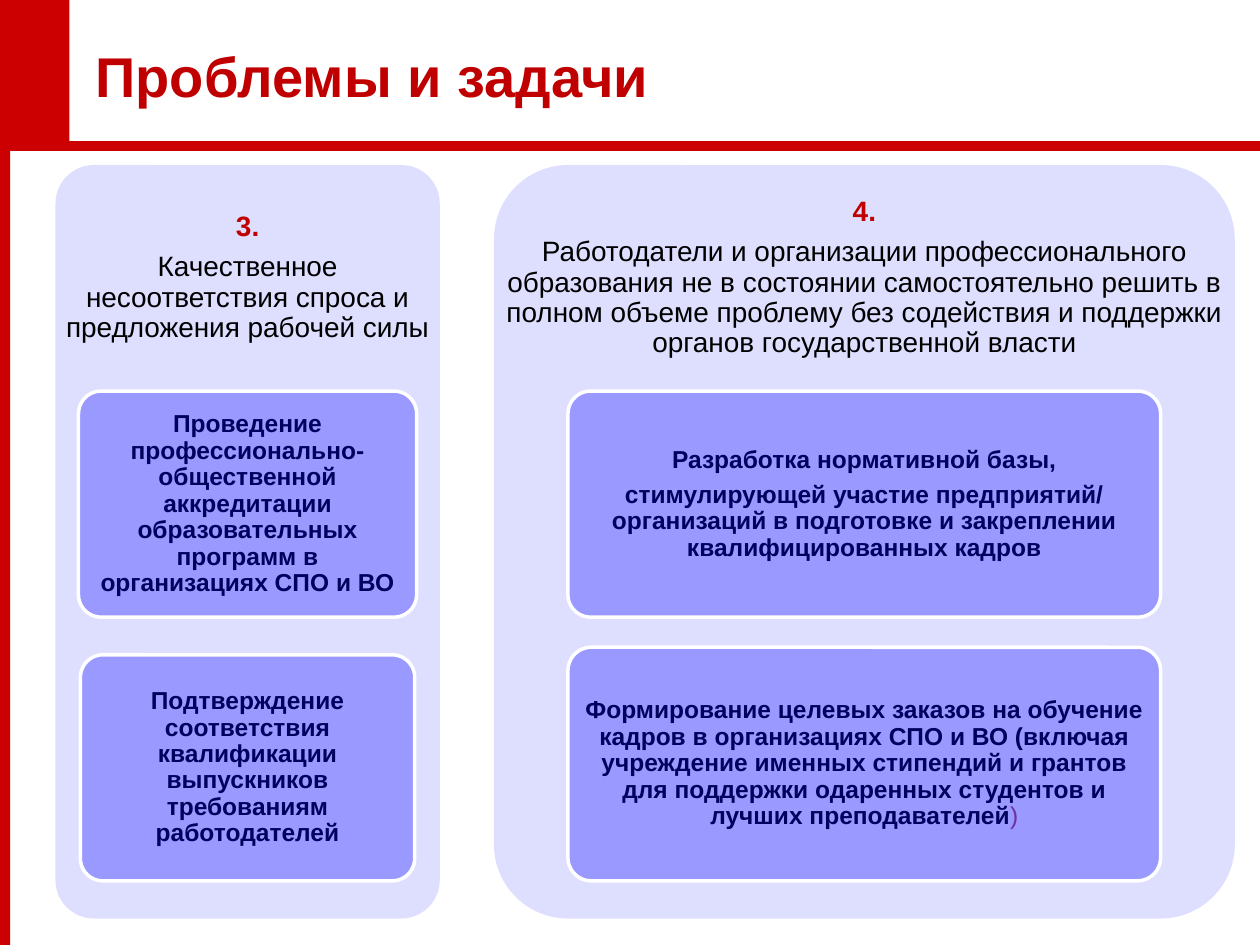
import pptx
import pptx.dml.color
import pptx.enum.shapes
import pptx.enum.text
import pptx.util

ANCHOR = pptx.enum.text.MSO_ANCHOR
ALIGN = pptx.enum.text.PP_ALIGN
SHAPE = pptx.enum.shapes.MSO_SHAPE

SLIDE_WIDTH, SLIDE_HEIGHT = 10, 7.5
PANEL_TOP, PANEL_HEIGHT = 1.31, 5.98
HEADING_SHARE = 0.3

THEME = {
    "font": "Arial",
    "frame": "CC0000",
    "panel": "DEDEFF",
    "card": "9999FF",
    "outline": "FFFFFF",
    "title": {"size": 32, "bold": True, "color": "C00000"},
    "number": {"size": 16, "bold": True, "color": "C00000"},
    "problem": {"size": 16, "bold": False, "color": "000000"},
    "task": {"size": 14, "bold": True, "color": "00005E"},
    "bracket": {"size": 14, "bold": False, "color": "7030A0"},
}

PROBLEMS = [
    {
        "left": 0.44,
        "width": 3.05,
        "heading": [
            [("3.", "number")],
            [("Качественное несоответствия спроса и предложения рабочей силы", "problem")],
        ],
        "tasks": [
            (0.88, 0.3, 0.3, [[(
                "Проведение профессионально-общественной аккредитации "
                "образовательных программ в организациях СПО и ВО", "task")]]),
            (0.87, 0.65, 0.3, [[(
                "Подтверждение соответствия квалификации выпускников "
                "требованиям работодателей", "task")]]),
        ],
    },
    {
        "left": 3.92,
        "width": 5.88,
        "heading": [
            [("4.", "number")],
            [("Работодатели и организации профессионального образования не в состоянии "
              "самостоятельно решить в полном объеме проблему без содействия и поддержки "
              "органов государственной власти", "problem")],
        ],
        "tasks": [
            (0.8, 0.3, 0.3, [
                [("Разработка нормативной базы,", "task")],
                [("стимулирующей участие предприятий/ организаций в подготовке и "
                  "закреплении квалифицированных кадров", "task")],
            ]),
            (0.8, 0.64, 0.31, [[
                ("Формирование целевых заказов на обучение кадров в организациях СПО и ВО "
                 "(включая учреждение именных стипендий и грантов для поддержки одаренных "
                 "студентов и лучших преподавателей", "task"),
                (")", "bracket"),
            ]]),
        ],
    },
]


def rgb(color):
    """Return the colour object for a hex value."""
    return pptx.dml.color.RGBColor.from_string(color)


def inches(*lengths):
    """Convert lengths in inches."""
    return [pptx.util.Inches(length) for length in lengths]


def assign(target, values):
    """Set each named attribute of the target."""
    for name, value in values.items():
        setattr(target, name, value)


def add_block(slide, kind, box, fill, outline=None):
    """Add a filled shape with an optional outline."""
    block = slide.shapes.add_shape(kind, *inches(*box))
    block.shadow.inherit = False
    block.fill.solid()
    block.fill.fore_color.rgb = rgb(fill)
    if outline:
        block.line.color.rgb = rgb(outline)
        block.line.width = pptx.util.Pt(2)
    else:
        block.line.fill.background()
    return block


def add_rounded(slide, box, fill, outline=None):
    """Add a filled rectangle with rounded corners."""
    rounded = add_block(slide, SHAPE.ROUNDED_RECTANGLE, box, fill, outline)
    rounded.adjustments[0] = 0.1
    return rounded


def write(frame, paragraphs, side, end, layout):
    """Write styled paragraphs into a text frame."""
    side, end = inches(side, end)
    assign(frame, {
        "word_wrap": True,
        "vertical_anchor": ANCHOR.MIDDLE,
        "margin_left": side,
        "margin_right": side,
        "margin_top": end,
        "margin_bottom": end,
    })
    for index, pieces in enumerate(paragraphs):
        paragraph = frame.add_paragraph() if index else frame.paragraphs[0]
        size = THEME[pieces[0][1]]["size"]
        assign(paragraph, layout)
        if layout["alignment"] == ALIGN.CENTER:
            paragraph.space_after = pptx.util.Pt(round(size * 0.35, 1))
        for words, style in pieces:
            run = paragraph.add_run()
            run.text = words
            look = THEME[style]
            assign(run.font, {
                "name": THEME["font"],
                "size": pptx.util.Pt(look["size"]),
                "bold": look["bold"],
            })
            run.font.color.rgb = rgb(look["color"])


def add_text(slide, box, paragraphs, side, end, layout):
    """Add a text box."""
    frame = slide.shapes.add_textbox(*inches(*box)).text_frame
    write(frame, paragraphs, side, end, layout)


def add_frame(slide):
    """Add the red bars and the rule under the title."""
    add_block(slide, SHAPE.RECTANGLE, (0, 0, 0.08, SLIDE_HEIGHT), THEME["frame"])
    rule = slide.shapes.add_connector(
        pptx.enum.shapes.MSO_CONNECTOR.STRAIGHT, *inches(0, 1.16, SLIDE_WIDTH, 1.16))
    rule.line.color.rgb = rgb(THEME["frame"])
    rule.line.width = pptx.util.Pt(6)
    properties = rule.element.spPr
    properties.append(properties.makeelement(pptx.oxml.ns.qn("a:effectLst"), {}))
    add_block(slide, SHAPE.RECTANGLE, (0, 0, 0.55, 1.14), THEME["frame"])


def add_problem(slide, problem):
    """Add a panel with its heading and task cards."""
    centered = {"alignment": ALIGN.CENTER, "line_spacing": 0.9}
    left, width = problem["left"], problem["width"]
    add_rounded(slide, (left, PANEL_TOP, width, PANEL_HEIGHT), THEME["panel"])
    add_text(slide, (left, PANEL_TOP, width, PANEL_HEIGHT * HEADING_SHARE),
             problem["heading"], 0.07, 0.07, centered)
    for width_share, top_share, height_share, paragraphs in problem["tasks"]:
        box = (
            left + width * (1 - width_share) / 2,
            PANEL_TOP + PANEL_HEIGHT * top_share,
            width * width_share,
            PANEL_HEIGHT * height_share,
        )
        card = add_rounded(slide, box, THEME["card"], THEME["outline"])
        write(card.text_frame, paragraphs, 0.04, 0.03, centered)


def main():
    """Build and save the slide."""
    deck = pptx.Presentation()
    deck.slide_width, deck.slide_height = inches(SLIDE_WIDTH, SLIDE_HEIGHT)
    slide = deck.slides.add_slide(deck.slide_layouts[6])
    add_frame(slide)
    add_text(slide, (0.66, 0.13, 8.24, 0.94), [[("Проблемы и задачи", "title")]],
             0.1, 0.05, {"alignment": ALIGN.LEFT})
    for problem in PROBLEMS:
        add_problem(slide, problem)
    deck.save("out.pptx")


if __name__ == "__main__":
    main()
